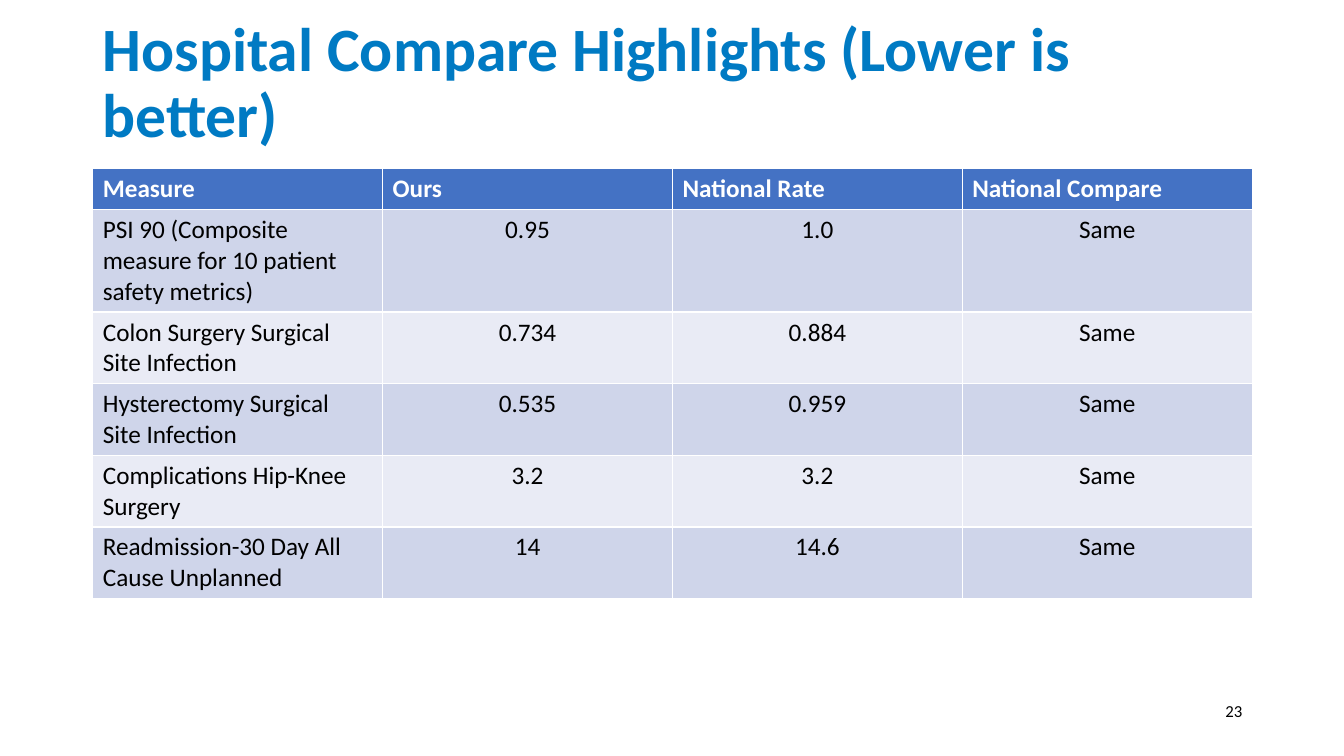
from pptx import Presentation
from pptx import util as u
from pptx.dml import color
from pptx.enum import text


def paint(fill, hex_code):
    fill.solid()
    fill.fore_color.rgb = color.RGBColor.from_string(hex_code)


def write(para, words, size, hex_code, bold=False):
    span = para.add_run()
    span.text = words
    span.font.name = "Calibri"
    span.font.size = u.Pt(size)
    span.font.bold = bold
    paint(span.font.fill, hex_code)


deck = Presentation()
deck.slide_width = u.Inches(13.33)
deck.slide_height = u.Inches(7.5)
page = deck.slides.add_slide(deck.slide_layouts[6])

measures = [
    ("Measure", "Ours", "National Rate", "National Compare"),
    ("PSI 90 (Composite measure for 10 patient safety metrics)", "0.95", "1.0", "Same"),
    ("Colon Surgery Surgical Site Infection", "0.734", "0.884", "Same"),
    ("Hysterectomy Surgical Site Infection", "0.535", "0.959", "Same"),
    ("Complications Hip-Knee Surgery", "3.2", "3.2", "Same"),
    ("Readmission-30 Day All Cause Unplanned", "14", "14.6", "Same"),
]
row_heights = [0.41, 1.0, 0.7, 0.7, 0.7, 0.7]

table = page.shapes.add_table(
    len(measures), 4, u.Inches(0.92), u.Inches(1.67), u.Inches(11.5), u.Inches(4.21)
).table
for row, height in zip(table.rows, row_heights):
    row.height = u.Inches(height)

for r, measure in enumerate(measures):
    header = r == 0
    for c, words in enumerate(measure):
        cell = table.cell(r, c)
        para = cell.text_frame.paragraphs[0]
        if c and not header:
            para.alignment = text.PP_ALIGN.CENTER
        write(para, words, 18, "FFFFFF" if header else "000000", header)
        paint(cell.fill, "4472C4" if header else ("E9EBF5", "CFD5EA")[r % 2])

labels = [
    ("Hospital Compare Highlights (Lower is better)", (0.92, 0.26, 11.5, 1.16),
     44, "007AC3", True, text.PP_ALIGN.LEFT, 0.9),
    ("23", (11.67, 6.85, 0.75, 0.4), 12, "000000", False, text.PP_ALIGN.RIGHT, 1.0),
]
for words, place, size, hex_code, bold, alignment, spacing in labels:
    box = page.shapes.add_textbox(*map(u.Inches, place))
    box.text_frame.word_wrap = True
    box.text_frame.vertical_anchor = text.MSO_ANCHOR.MIDDLE
    para = box.text_frame.paragraphs[0]
    para.alignment = alignment
    para.line_spacing = spacing
    write(para, words, size, hex_code, bold)

deck.save("out.pptx")
